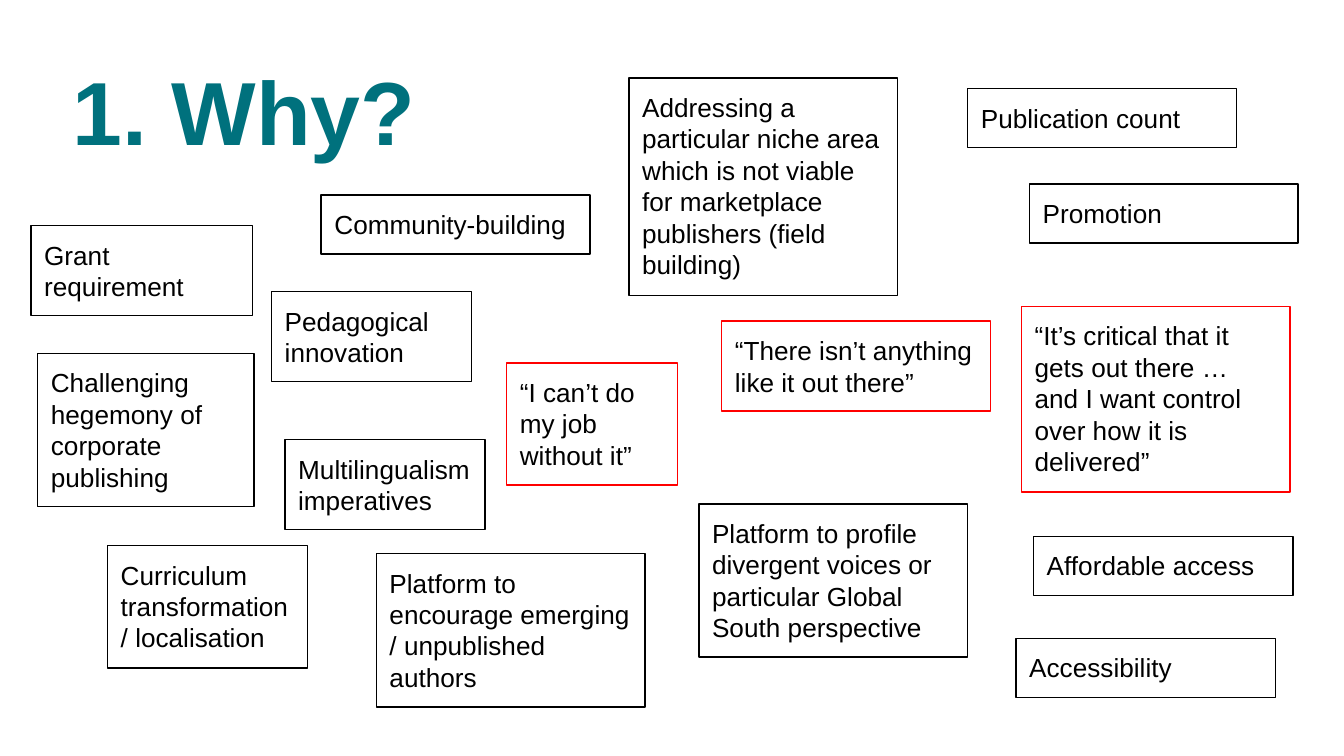
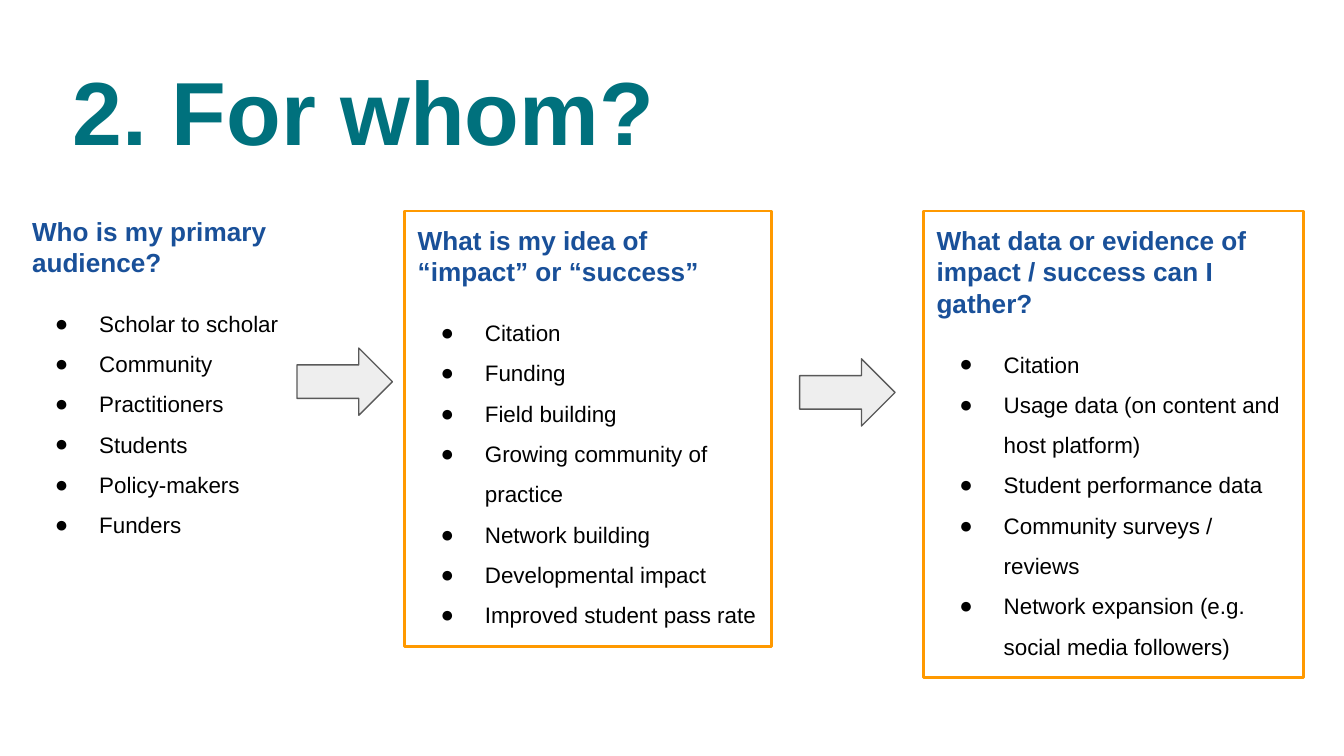
from dataclasses import dataclass

from lxml import etree
from pptx import Presentation
from pptx.dml.color import RGBColor
from pptx.enum.shapes import MSO_SHAPE
from pptx.enum.text import MSO_ANCHOR, MSO_AUTO_SIZE, PP_ALIGN
from pptx.oxml.ns import qn
from pptx.util import Inches, Pt

RECT = MSO_SHAPE.RECTANGLE
ARROW = MSO_SHAPE.RIGHT_ARROW
TOP = MSO_ANCHOR.TOP
LEFT = PP_ALIGN.LEFT
GROW = MSO_AUTO_SIZE.SHAPE_TO_FIT_TEXT


@dataclass(frozen=True)
class Theme:
    font: str = "Arial"
    teal: str = "00717D"
    blue: str = "195099"
    ink: str = "000000"
    red: str = "FF0000"
    gold: str = "FF9900"
    pale: str = "EEEEEE"
    grey: str = "595959"
    title: int = 48
    head: int = 14
    item: int = 12
    thin: float = 0.75
    thick: float = 1.5
    pad: float = 0.1


THEME = Theme()

REASONS = [
    (0.23, 1.68, 1.65, 0.67, "Grant requirement"),
    (0.28, 2.63, 1.61, 1.14, "Challenging hegemony of corporate publishing"),
    (2.39, 1.45, 2, 0.44, "Community-building"),
    (5.2, 3.75, 2, 1.14,
     "Platform to profile divergent voices or particular Global South perspective"),
    (4.68, 0.58, 2, 1.62,
     "Addressing a particular niche area which is not viable for "
     "marketplace publishers (field building)"),
    (2.8, 4.12, 2, 1.14, "Platform to encourage emerging / unpublished authors"),
    (7.2, 0.66, 2, 0.44, "Publication count"),
    (7.66, 1.37, 2, 0.44, "Promotion"),
    (7.69, 3.99, 1.93, 0.44, "Affordable access"),
    (0.8, 4.06, 1.49, 0.91, "Curriculum transformation / localisation"),
    (2.02, 2.17, 1.49, 0.67, "Pedagogical innovation"),
    (2.12, 3.27, 1.49, 0.67, "Multilingualism imperatives"),
    (7.56, 4.75, 1.93, 0.44, "Accessibility"),
]

QUOTES = [
    (5.37, 2.39, 2, 0.67, "“There isn’t anything like it out there”"),
    (7.6, 2.28, 2, 1.38,
     "“It’s critical that it gets out there … and I want control "
     "over how it is delivered”"),
    (3.77, 2.7, 1.27, 0.91, "“I can’t do my job without it”"),
]

PEOPLE = ["Scholar to scholar", "Community", "Practitioners", "Students",
          "Policy-makers", "Funders"]
IMPACT = ["Citation", "Funding", "Field building", "Growing community of practice",
          "Network building", "Developmental impact", "Improved student pass rate"]
PROOF = ["Citation", "Usage data (on content and host platform)",
         "Student performance data", "Community surveys / reviews",
         "Network expansion (e.g. social media followers)"]


def color(code):
    return RGBColor.from_string(code)


def set_frame(shape):
    frame = shape.text_frame
    frame.word_wrap = True
    frame.vertical_anchor = TOP
    frame.margin_left = frame.margin_right = Inches(THEME.pad)
    frame.margin_top = frame.margin_bottom = Inches(THEME.pad)
    return frame


def write(para, text, size, code, bold=False):
    para.text = text
    para.alignment = LEFT
    font = para.font
    font.name = THEME.font
    font.size = Pt(size)
    font.bold = bold
    font.color.rgb = color(code)


def add_bullet(para):
    props = para._p.get_or_add_pPr()
    props.set("marL", str(Inches(0.5)))
    props.set("indent", str(-Inches(0.33)))
    tint = etree.SubElement(props, qn("a:buClr"))
    etree.SubElement(tint, qn("a:srgbClr"), val=THEME.ink)
    etree.SubElement(props, qn("a:buFont"), typeface=THEME.font)
    etree.SubElement(props, qn("a:buChar"), char="●")


def add_title(slide, text, width):
    box = slide.shapes.add_textbox(*map(Inches, (0.44, 0.32, width, 0.63)))
    frame = set_frame(box)
    write(frame.paragraphs[0], text, THEME.title, THEME.teal, True)


def add_form(slide, kind, area, line, width, fill=None):
    shape = slide.shapes.add_shape(kind, *map(Inches, area))
    shape.shadow.inherit = False
    if fill:
        shape.fill.solid()
        shape.fill.fore_color.rgb = color(fill)
    else:
        shape.fill.background()
    shape.line.color.rgb = color(line)
    shape.line.width = Pt(width)
    return shape


def add_card(slide, area, text, line):
    card = add_form(slide, RECT, area, line, THEME.thin)
    frame = set_frame(card)
    frame.auto_size = GROW
    write(frame.paragraphs[0], text, THEME.head, THEME.ink)


def fill_list(shape, head, items):
    frame = set_frame(shape)
    frame.auto_size = GROW
    write(frame.paragraphs[0], head, THEME.head, THEME.blue, True)
    for index, item in enumerate(items):
        para = frame.add_paragraph()
        write(para, item, THEME.item, THEME.ink)
        para.line_spacing = 1.5
        para.space_before = Pt(0 if index else 10)
        add_bullet(para)


def add_panel(slide, area, head, items):
    panel = add_form(slide, RECT, area, THEME.gold, THEME.thick)
    fill_list(panel, head, items)


def add_arrow(slide, left, top):
    add_form(slide, ARROW, (left, top, 0.71, 0.5), THEME.grey, THEME.thin, THEME.pale)


def build_why(slide):
    add_title(slide, "1. Why?", 3.33)
    for cards, line in ((REASONS, THEME.ink), (QUOTES, THEME.red)):
        for *area, text in cards:
            add_card(slide, area, text, line)


def build_whom(slide):
    add_title(slide, "2. For whom?", 7.44)
    box = slide.shapes.add_textbox(*map(Inches, (0.14, 1.5, 2.24, 2.63)))
    fill_list(box, "Who is my primary audience?", PEOPLE)
    add_panel(slide, (3.01, 1.57, 2.73, 3.24),
              "What is my idea of “impact” or “success”", IMPACT)
    add_arrow(slide, 2.21, 2.59)
    add_panel(slide, (6.87, 1.57, 2.83, 3.47),
              "What data or evidence of impact / success can I gather?", PROOF)
    add_arrow(slide, 5.95, 2.67)


def main():
    deck = Presentation()
    deck.slide_width = Inches(10)
    deck.slide_height = Inches(10 * 9 / 16)
    for build in (build_why, build_whom):
        build(deck.slides.add_slide(deck.slide_layouts[6]))
    deck.save("out.pptx")


if __name__ == "__main__":
    main()
